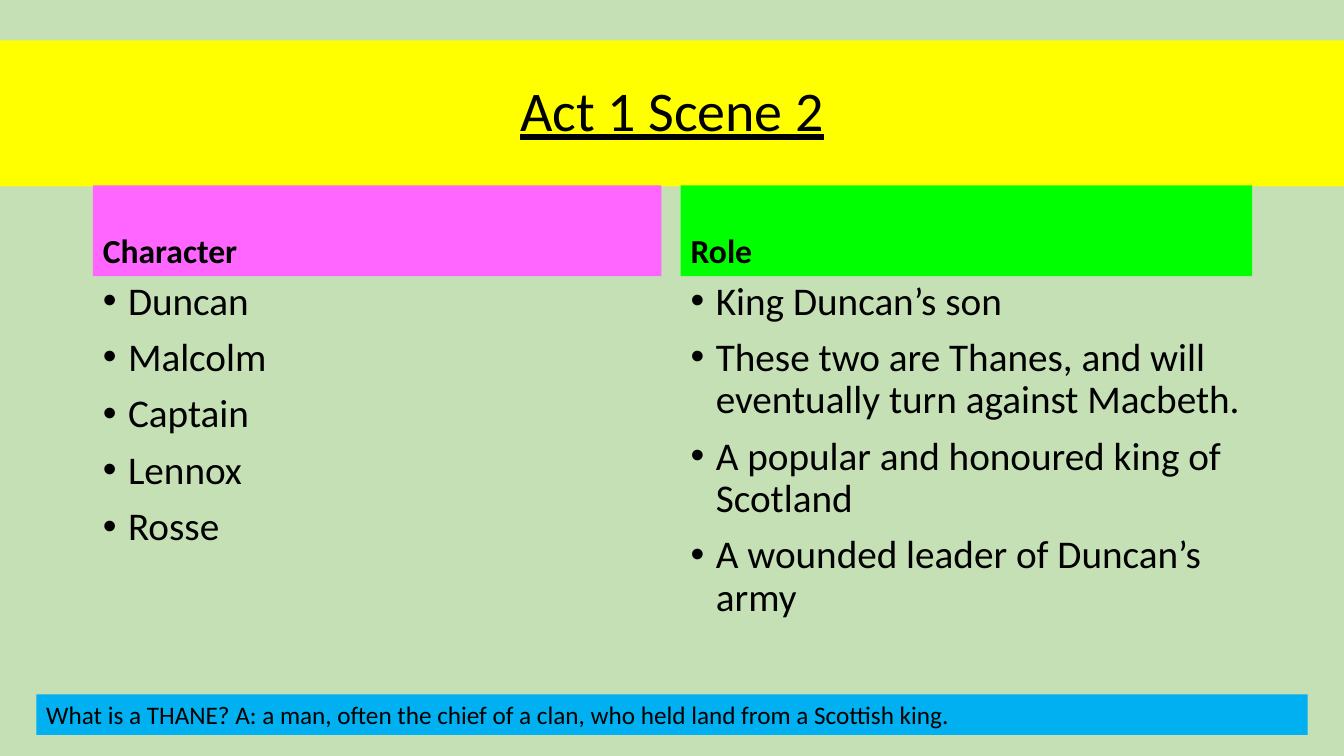
from dataclasses import dataclass

from lxml.etree import SubElement
from pptx import Presentation
from pptx.dml.color import RGBColor
from pptx.enum.text import MSO_ANCHOR as Anchor, MSO_AUTO_SIZE as AutoSize, PP_ALIGN as Align
from pptx.oxml.ns import qn
from pptx.util import Inches, Pt

TITLE = "Act 1 Scene 2"
COLUMNS = [
    {
        "heading": "Character",
        "color": "FF66FF",
        "left": 0.92,
        "width": 5.64,
        "items": ["Duncan", "Malcolm", "Captain", "Lennox", "Rosse"],
    },
    {
        "heading": "Role",
        "color": "00FF00",
        "left": 6.75,
        "width": 5.67,
        "items": [
            "King Duncan’s son",
            "These two are Thanes, and will eventually turn against Macbeth.",
            "A popular and honoured king of Scotland",
            "A wounded leader of Duncan’s army",
        ],
    },
]
DEFINITION = "What is a THANE? A: a man, often the chief of a clan, who held land from a Scottish king."


@dataclass(frozen=True)
class Theme:
    font: str = "Calibri"
    text: str = "000000"
    background: str = "C5E0B4"
    title_fill: str = "FFFF00"
    definition_fill: str = "00B0F0"
    title_size: int = 40
    heading_size: int = 24
    item_size: int = 28
    definition_size: int = 18


THEME = Theme()
SLIDE_WIDTH, SLIDE_HEIGHT = 13.33, 7.5
HEADING_TOP, HEADING_HEIGHT = 1.84, 0.9
LIST_TOP, LIST_HEIGHT = HEADING_TOP + HEADING_HEIGHT, 4.03
COMPARISON_LAYOUT = 4


def place(shape, left, top, width, height):
    shape.left, shape.top = Inches(left), Inches(top)
    shape.width, shape.height = Inches(width), Inches(height)


def paint(fill, color):
    fill.solid()
    fill.fore_color.rgb = RGBColor.from_string(color)


def add_bullet(paragraph):
    properties = paragraph._p.get_or_add_pPr()
    properties.set("marL", str(Inches(0.25)))
    properties.set("indent", str(Inches(-0.25)))
    SubElement(properties, qn("a:buFont"), typeface="Arial")
    SubElement(properties, qn("a:buChar"), char="•")


def write(shape, lines, size, anchor=Anchor.TOP, align=Align.LEFT, bold=False,
          underline=False, bullets=False, spacing=0.9, before=0):
    frame = shape.text_frame
    frame.text = "\n".join(lines)
    frame.word_wrap = True
    frame.auto_size = AutoSize.NONE
    frame.vertical_anchor = anchor
    for paragraph in frame.paragraphs:
        if bullets:
            add_bullet(paragraph)
        paragraph.alignment = align
        paragraph.line_spacing = spacing
        paragraph.space_before = Pt(before)
        font = paragraph.font
        font.name, font.size = THEME.font, Pt(size)
        font.bold, font.underline = bold, underline
        font.color.rgb = RGBColor.from_string(THEME.text)


def add_column(heading, items, column):
    place(heading, column["left"], HEADING_TOP, column["width"], HEADING_HEIGHT)
    paint(heading.fill, column["color"])
    write(heading, [column["heading"]], THEME.heading_size, Anchor.BOTTOM, bold=True, before=10)
    place(items, column["left"], LIST_TOP, column["width"], LIST_HEIGHT)
    write(items, column["items"], THEME.item_size, bullets=True, before=10)


def add_definition(slide):
    box = slide.shapes.add_textbox(Inches(0.36), Inches(6.89), Inches(12.61), Inches(0.4))
    paint(box.fill, THEME.definition_fill)
    write(box, [DEFINITION], THEME.definition_size, spacing=1.0)
    box.text_frame.auto_size = AutoSize.SHAPE_TO_FIT_TEXT


def main():
    presentation = Presentation()
    presentation.slide_width = Inches(SLIDE_WIDTH)
    presentation.slide_height = Inches(SLIDE_HEIGHT)
    slide = presentation.slides.add_slide(presentation.slide_layouts[COMPARISON_LAYOUT])
    paint(slide.background.fill, THEME.background)

    title, *bodies = slide.placeholders
    place(title, 0, 0.4, SLIDE_WIDTH, 1.45)
    paint(title.fill, THEME.title_fill)
    write(title, [TITLE], THEME.title_size, Anchor.MIDDLE, Align.CENTER, underline=True)

    for heading, items, column in zip(bodies[::2], bodies[1::2], COLUMNS):
        add_column(heading, items, column)
    add_definition(slide)
    presentation.save("out.pptx")


if __name__ == "__main__":
    main()
